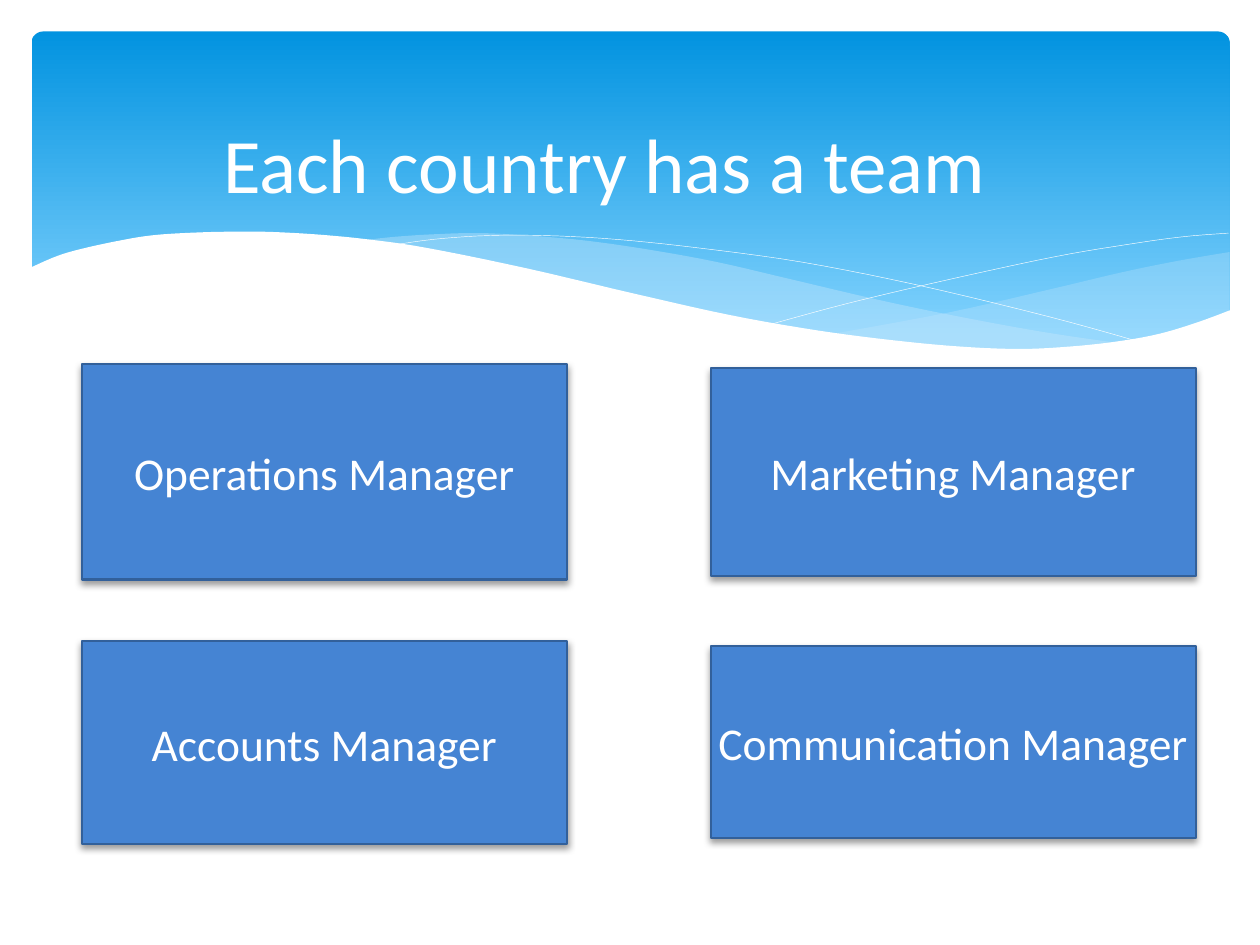
from lxml import etree
from pptx import Presentation
from pptx.dml.color import RGBColor
from pptx.enum.shapes import MSO_SHAPE
from pptx.enum.text import MSO_ANCHOR, PP_ALIGN
from pptx.oxml.ns import qn
from pptx.util import Inches, Pt

RECTANGLE, ROUNDED = MSO_SHAPE.RECTANGLE, MSO_SHAPE.ROUNDED_RECTANGLE
CENTER, MIDDLE = PP_ALIGN.CENTER, MSO_ANCHOR.MIDDLE

WHITE = RGBColor(0xFF, 0xFF, 0xFF)
SKY_TOP = RGBColor(0x02, 0x93, 0xE0)
SKY_BOTTOM = RGBColor(0x83, 0xD3, 0xFE)
MIST = RGBColor(0xC6, 0xE7, 0xFC)
ROLE_FILL = RGBColor(0x45, 0x84, 0xD3)
ROLE_EDGE = RGBColor(0x32, 0x60, 0x9A)


def smooth(knots, steps=5):
    """Return points of a Catmull-Rom curve through the knots."""
    padded = [knots[0], *knots, knots[-1]]
    points = [knots[0]]
    for a, b, c, d in zip(padded, padded[1:], padded[2:], padded[3:]):
        for step in range(1, steps + 1):
            t = step / steps
            points.append(tuple(
                (2 * q + (r - p) * t + (2 * p - 5 * q + 4 * r - s) * t ** 2
                 + (3 * q - p - 3 * r + s) * t ** 3) / 2
                for p, q, r, s in zip(a, b, c, d)))
    return points


def write_centered(shape, text, size):
    frame = shape.text_frame
    frame.word_wrap = True
    frame.vertical_anchor = MIDDLE
    frame.margin_left = frame.margin_right = Inches(0.05)
    frame.margin_top = frame.margin_bottom = Inches(0.05)
    paragraph = frame.paragraphs[0]
    paragraph.alignment = CENTER
    run = paragraph.add_run()
    run.text = text
    run.font.size = Pt(size)
    run.font.name = "Calibri"
    run.font.color.rgb = WHITE


prs = Presentation()
prs.slide_width, prs.slide_height = Inches(10), Inches(7.5)
slide = prs.slides.add_slide(prs.slide_layouts[6])
shapes = slide.shapes

# Sky banner
sky = shapes.add_shape(ROUNDED, Inches(0.25), Inches(0.25), Inches(9.51), Inches(2.7))
sky.adjustments[0] = 0.034
sky.shadow.inherit = False
sky.line.fill.background()
sky.fill.gradient()
sky.fill.gradient_angle = 270
for stop, position, color in zip(sky.fill.gradient_stops, (0, 0.9), (SKY_TOP, SKY_BOTTOM)):
    stop.position = position
    stop.color.rgb = color

# Waves: knots in inches; filled waves are closed, the others are thin lines
right_mist = (
    smooth([(9.76, 2), (9.35, 2.07), (8.91, 2.16), (8.32, 2.3), (7.53, 2.48), (6.61, 2.65)])
    + smooth([(6.61, 2.65), (7.05, 2.71), (7.57, 2.76), (8.03, 2.78), (8.54, 2.76),
              (9.05, 2.69), (9.35, 2.62), (9.76, 2.47)]))
middle_mist = (
    smooth([(8.93, 2.73), (8.37, 2.65), (7.75, 2.54), (7.06, 2.4), (6.29, 2.22),
            (5.69, 2.08), (5.14, 1.98), (4.65, 1.91), (4.2, 1.87), (3.8, 1.85),
            (3.44, 1.86), (3.13, 1.88), (2.86, 1.91)])
    + smooth([(2.86, 1.91), (3.42, 1.99), (4.04, 2.11), (4.49, 2.22), (5.3, 2.4),
              (6.01, 2.55), (6.65, 2.66), (7.22, 2.74), (7.73, 2.77), (8.18, 2.78),
              (8.57, 2.77), (8.93, 2.73)]))
falling_line = smooth([(3.09, 1.95), (3.44, 1.9), (3.87, 1.87), (4.33, 1.87), (4.89, 1.9),
                       (5.56, 1.97), (6.36, 2.08), (7.27, 2.26), (8.31, 2.51), (9.07, 2.72)])
rising_line = smooth([(6.13, 2.57), (6.72, 2.41), (7.48, 2.23), (8.36, 2.04),
                      (8.95, 1.94), (9.38, 1.88), (9.75, 1.85)])
white_front = smooth([
    (9.77, 2.46), (9.5, 2.56), (9.2, 2.65), (8.87, 2.71), (8.5, 2.75), (8.09, 2.77),
    (7.61, 2.75), (7.08, 2.7), (6.47, 2.62), (5.79, 2.5), (5.03, 2.33), (4.18, 2.13),
    (3.4, 1.97), (2.92, 1.9), (2.5, 1.86), (2.11, 1.84), (1.77, 1.84), (1.46, 1.85),
    (1.19, 1.87), (0.95, 1.91), (0.67, 1.97), (0.46, 2.03), (0.23, 2.13),
]) + [(0.23, 3.29), (9.77, 3.29)]

for points, color, opacity in (
    (right_mist, MIST, 29),
    (middle_mist, MIST, 40),
    (falling_line, None, 100),
    (rising_line, None, 100),
    (white_front, WHITE, 100),
):
    outline = [(Inches(x), Inches(y)) for x, y in points]
    builder = shapes.build_freeform(*outline[0])
    builder.add_line_segments(outline[1:], close=color is not None)
    wave = builder.convert_to_shape()
    wave.shadow.inherit = False
    if color is None:
        wave.fill.background()
        wave.line.color.rgb = WHITE
        wave.line.width = Pt(0.25)
        continue
    wave.line.fill.background()
    wave.fill.solid()
    wave.fill.fore_color.rgb = color
    if opacity < 100:
        tint = wave._element.spPr.find(qn("a:solidFill")).find(qn("a:srgbClr"))
        etree.SubElement(tint, qn("a:alpha"), val=str(opacity * 1000))

title = shapes.add_textbox(Inches(0.3), Inches(0.61), Inches(9), Inches(1.37))
write_centered(title, "Each country has a team", 44)

# Team roles: two columns, each box with its own top and height
COLUMNS = (0.65, 5.64)
ROLE_WIDTH = 3.85
for role, column, top, height in (
    ("Operations Manager", 0, 2.89, 1.71),
    ("Marketing Manager", 1, 2.92, 1.65),
    ("Accounts Manager", 0, 5.09, 1.61),
    ("Communication Manager", 1, 5.13, 1.52),
):
    box = shapes.add_shape(RECTANGLE, Inches(COLUMNS[column]), Inches(top),
                           Inches(ROLE_WIDTH), Inches(height))
    box.fill.solid()
    box.fill.fore_color.rgb = ROLE_FILL
    box.line.color.rgb = ROLE_EDGE
    box.line.width = Pt(1.25)
    box.shadow.inherit = False
    effects = box._element.spPr.find(qn("a:effectLst"))
    shadow = etree.SubElement(effects, qn("a:outerShdw"), blurRad=str(Pt(4)),
                              dist=str(Pt(2)), dir=str(90 * 60000), rotWithShape="0")
    shade = etree.SubElement(shadow, qn("a:srgbClr"), val="000000")
    etree.SubElement(shade, qn("a:alpha"), val="38000")
    write_centered(box, role, 26)

prs.save("out.pptx")
